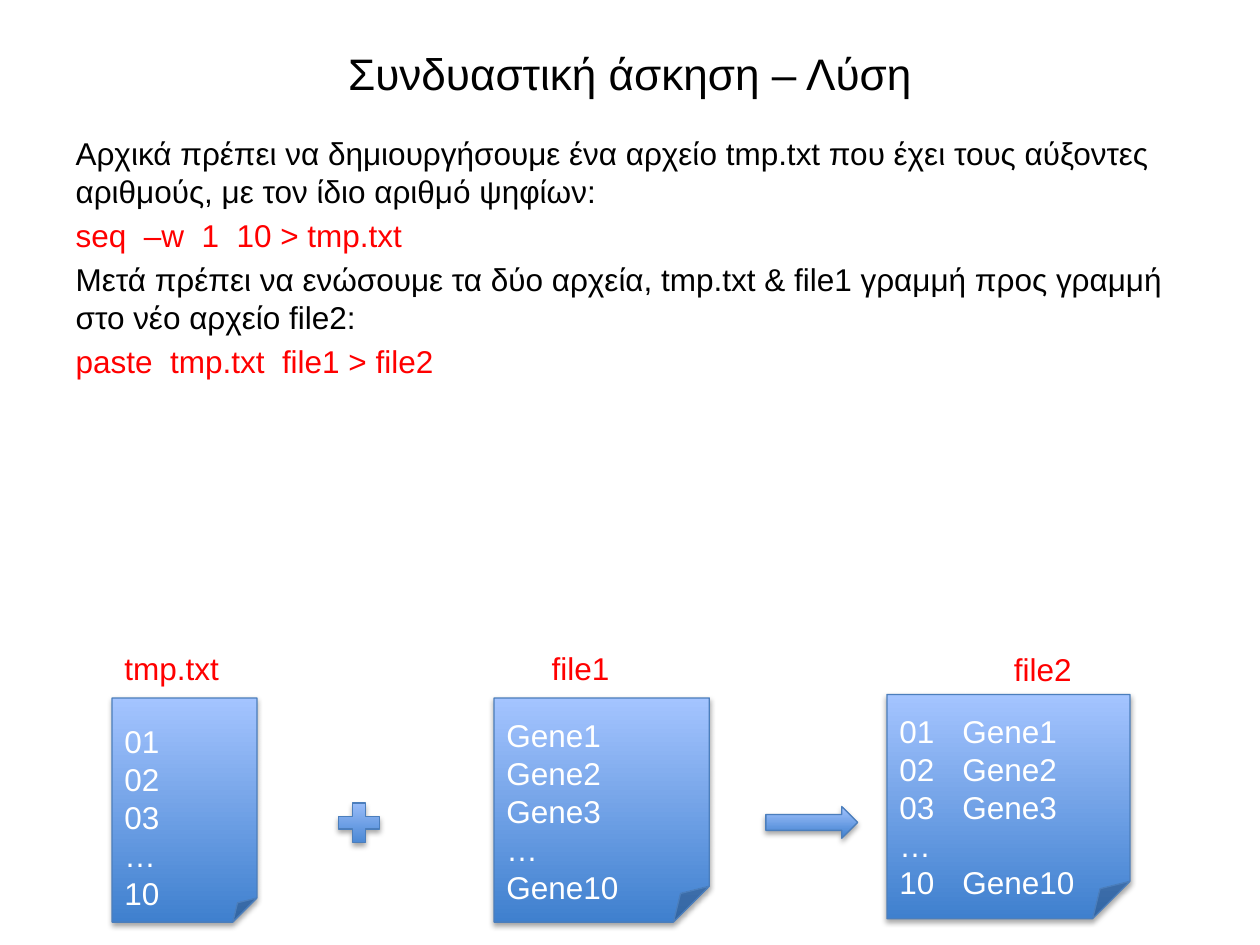
from dataclasses import dataclass

from lxml import etree
from pptx import Presentation
from pptx.dml.color import RGBColor
from pptx.enum.shapes import MSO_SHAPE
from pptx.enum.text import MSO_ANCHOR, MSO_AUTO_SIZE, PP_ALIGN
from pptx.oxml import parse_xml
from pptx.oxml.ns import nsdecls, qn
from pptx.util import Cm, Pt

NOTE = MSO_SHAPE.FOLDED_CORNER
PLUS = MSO_SHAPE.MATH_PLUS
ARROW = MSO_SHAPE.RIGHT_ARROW
MIDDLE = MSO_ANCHOR.MIDDLE
JUSTIFY = PP_ALIGN.JUSTIFY
NO_FIT = MSO_AUTO_SIZE.NONE
GROW = MSO_AUTO_SIZE.SHAPE_TO_FIT_TEXT


@dataclass(frozen=True)
class Theme:
    font: str = "Arial"
    title_size: float = 25.2
    text_size: float = 18
    ink: str = "000000"
    command: str = "FF0000"
    paper: str = "FFFFFF"
    gradient: tuple = ("3F80CE", "A4C4FF")
    outline: str = "4B7EBC"
    shadow: str = "000000"


theme = Theme()


def format_text(paragraph, size, color):
    for span in paragraph.runs:
        span.font.name = theme.font
        span.font.size = Pt(size)
        span.font.color.rgb = RGBColor.from_string(color)


def add_glossy_shape(page, kind, left, top, width, height):
    shape = page.shapes.add_shape(kind, Cm(left), Cm(top), Cm(width), Cm(height))
    shape.fill.gradient()
    shape.fill.gradient_angle = 90
    for stop, color in zip(shape.fill.gradient_stops, theme.gradient):
        stop.color.rgb = RGBColor.from_string(color)
    shape.line.color.rgb = RGBColor.from_string(theme.outline)
    shape.line.width = Pt(0.75)
    shape.shadow.inherit = False
    effects = shape._element.spPr.find(qn("a:effectLst"))
    effects.append(parse_xml(
        f'<a:outerShdw {nsdecls("a")} blurRad="{Pt(3.1)}" dist="{Pt(1.8)}" '
        f'dir="5400000" rotWithShape="0"><a:srgbClr val="{theme.shadow}">'
        '<a:alpha val="35000"/></a:srgbClr></a:outerShdw>'))
    return shape


deck = Presentation()
deck.slide_width = Cm(25.4)
deck.slide_height = Cm(19.05)
page = deck.slides.add_slide(deck.slide_layouts[1])

title = page.shapes.title
title.left, title.top, title.width, title.height = Cm(1.27), Cm(0.76), Cm(22.86), Cm(1.4)
title.text_frame.text = "Συνδυαστική άσκηση – Λύση"
title.text_frame.auto_size = NO_FIT
format_text(title.text_frame.paragraphs[0], theme.title_size, theme.ink)

steps = [
    ("Αρχικά πρέπει να δημιουργήσουμε ένα αρχείο tmp.txt που έχει τους αύξοντες "
     "αριθμούς, με τον ίδιο αριθμό ψηφίων:", theme.ink),
    ("seq  –w  1  10 > tmp.txt", theme.command),
    ("Μετά πρέπει να ενώσουμε τα δύο αρχεία, tmp.txt & file1 γραμμή προς γραμμή "
     "στο νέο αρχείο file2:", theme.ink),
    ("paste  tmp.txt  file1 > file2", theme.command),
]
body = page.placeholders[1]
body.left, body.top, body.width, body.height = Cm(1.27), Cm(2.57), Cm(22.86), Cm(9.53)
body.text_frame.text = "\n".join(text for text, color in steps)
body.text_frame.auto_size = NO_FIT
for paragraph, (text, color) in zip(body.text_frame.paragraphs, steps):
    properties = paragraph._p.get_or_add_pPr()
    properties.set("marL", "0")
    properties.set("indent", "0")
    etree.SubElement(properties, qn("a:buNone"))
    format_text(paragraph, theme.text_size, color)
body.text_frame.paragraphs[0].space_before = Pt(0)

files = [
    ("tmp.txt", 2.26, 12.95, 2.44, 2.26, 14.07, 2.92, ["01", "02", "03", "…", "10"]),
    ("file1", 10.87, 12.95, 1.7, 9.96, 14.07, 4.34,
     ["Gene1", "Gene2", "Gene3", "…", "Gene10"]),
    ("file2", 20.19, 12.98, 1.7, 17.88, 14, 4.9,
     ["01\tGene1", "02\tGene2", "03\tGene3", "…", "10\tGene10"]),
]
for name, label_left, label_top, label_width, left, top, width, lines in files:
    note = add_glossy_shape(page, NOTE, left, top, width, 4.52)
    frame = note.text_frame
    frame.text = "\n".join(lines)
    frame.vertical_anchor = MIDDLE
    frame.margin_top, frame.margin_bottom = Cm(0.89), Cm(0.13)
    for paragraph in frame.paragraphs:
        paragraph.alignment = JUSTIFY
        format_text(paragraph, theme.text_size, theme.paper)

    label = page.shapes.add_textbox(Cm(label_left), Cm(label_top), Cm(label_width), Cm(1.02))
    label.text_frame.text = name
    label.text_frame.word_wrap = False
    label.text_frame.auto_size = GROW
    format_text(label.text_frame.paragraphs[0], theme.text_size, theme.command)

add_glossy_shape(page, PLUS, 6.68, 16.05, 1.12, 1.07)
add_glossy_shape(page, ARROW, 15.44, 16.26, 1.85, 0.64)

deck.save("out.pptx")
